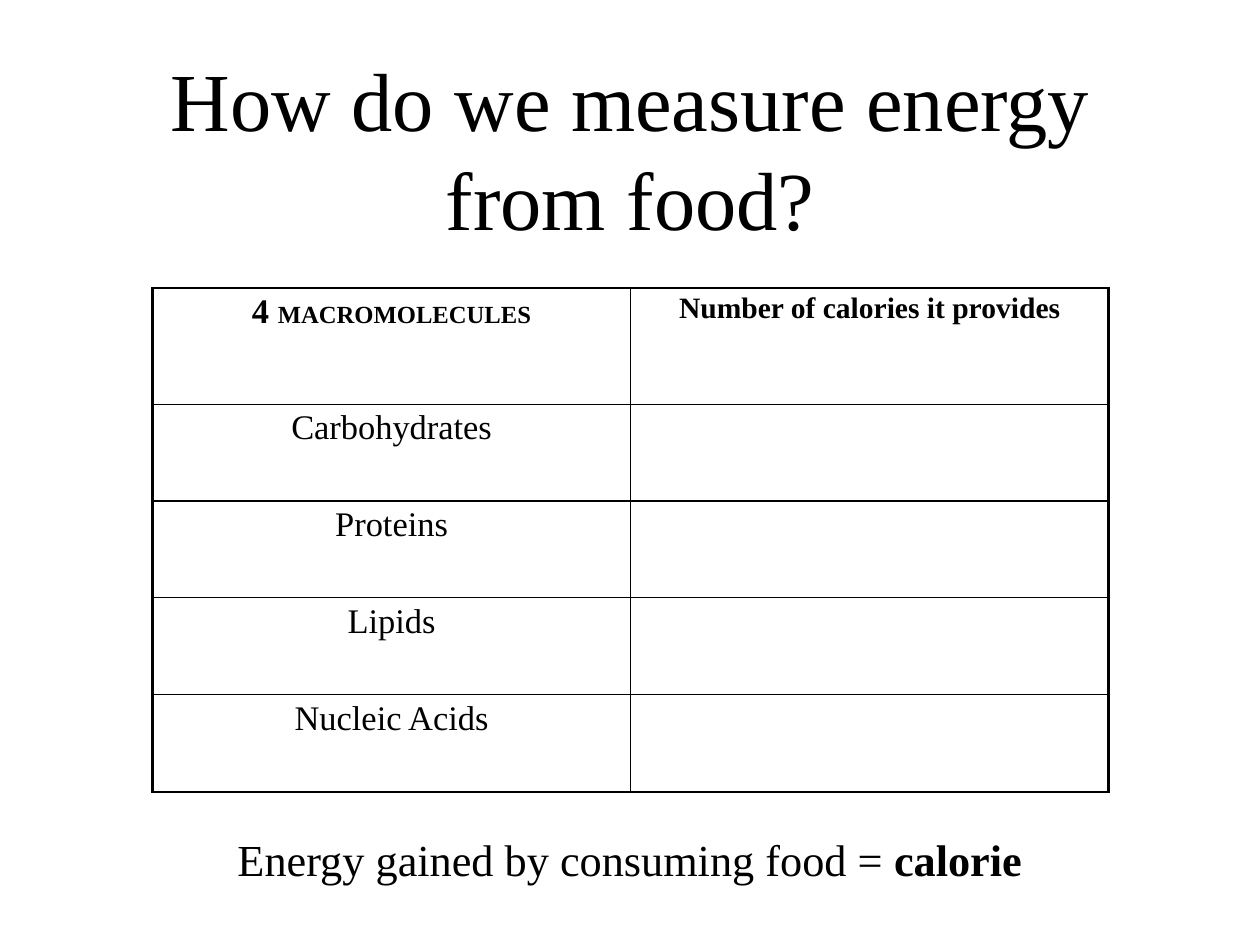
from lxml.etree import SubElement
from pptx import Presentation
from pptx.dml.color import RGBColor
from pptx.enum.text import MSO_ANCHOR, MSO_AUTO_SIZE, PP_ALIGN
from pptx.oxml.ns import qn
from pptx.util import Pt

COLORS = {"ink": "000000", "paper": "FFFFFF"}
FONT = "Times New Roman"
THICK, THIN = 2.25, 1
HEADINGS = [
    [("4 ", 28), ("MACROMOLECULES", 20)],
    [("Number of calories it provides", 24)],
]
MACROMOLECULES = ["Carbohydrates", "Proteins", "Lipids", "Nucleic Acids"]


def add_span(para, text, size, bold=False):
    span = para.add_run()
    span.text = text
    span.font.name = FONT
    span.font.size = Pt(size)
    span.font.bold = bold
    span.font.color.rgb = RGBColor.from_string(COLORS["ink"])


def prepare_frame(frame, inset):
    """Set the insets and middle anchor, and return the centred first paragraph."""
    frame.margin_left = frame.margin_right = Pt(inset)
    frame.margin_top = frame.margin_bottom = Pt(inset)
    frame.vertical_anchor = MSO_ANCHOR.MIDDLE
    para = frame.paragraphs[0]
    para.alignment = PP_ALIGN.CENTER
    return para


def add_title(page, left, top, width, height):
    title = page.shapes.title
    title.left, title.top = Pt(left), Pt(top)
    title.width, title.height = Pt(width), Pt(height)
    title.text_frame.auto_size = MSO_AUTO_SIZE.NONE
    para = prepare_frame(title.text_frame, 4.5)
    add_span(para, "How do we measure energy from food?", 67)


def set_borders(cell, widths):
    """Draw the cell's left, right, top and bottom lines, in that order."""
    properties = cell._tc.get_or_add_tcPr()
    for index, (side, width) in enumerate(zip("LRTB", widths)):
        line = properties.makeelement(qn(f"a:ln{side}"), {"w": str(Pt(width))})
        fill = SubElement(line, qn("a:solidFill"))
        SubElement(fill, qn("a:srgbClr"), val=COLORS["ink"])
        properties.insert(index, line)


def add_calorie_table(page, left, top, width, height):
    rows, columns = len(MACROMOLECULES) + 1, len(HEADINGS)
    frame = page.shapes.add_table(
        rows, columns, Pt(left), Pt(top), Pt(width), Pt(height)
    )
    table = frame.table
    table.first_row = table.horz_banding = False

    header_height = 94.4
    body_height = (height - header_height) / len(MACROMOLECULES)
    for column in table.columns:
        column.width = Pt(width / columns)
    for index, row in enumerate(table.rows):
        row.height = Pt(body_height if index else header_height)

    contents = [HEADINGS] + [[[(name, 28)], []] for name in MACROMOLECULES]
    for r, row_spans in enumerate(contents):
        for c, spans in enumerate(row_spans):
            cell = table.cell(r, c)
            cell.fill.solid()
            cell.fill.fore_color.rgb = RGBColor.from_string(COLORS["paper"])
            cell.margin_left = cell.margin_right = Pt(3.6)
            cell.margin_top = cell.margin_bottom = Pt(3.6)
            outer_edges = (c == 0, c == columns - 1, r == 0, r == rows - 1)
            set_borders(cell, [THICK if outer else THIN for outer in outer_edges])
            para = cell.text_frame.paragraphs[0]
            para.alignment = PP_ALIGN.CENTER
            para.space_before = Pt(5 if r == 0 and c == 1 else 6)
            for text, size in spans:
                add_span(para, text, size, bold=r == 0)


def add_caption(page, left, top, width, height):
    box = page.shapes.add_textbox(Pt(left), Pt(top), Pt(width), Pt(height))
    para = prepare_frame(box.text_frame, 4.5)
    box.text_frame.word_wrap = False
    box.text_frame.auto_size = MSO_AUTO_SIZE.SHAPE_TO_FIT_TEXT
    add_span(para, "Energy gained by consuming food = ", 36)
    add_span(para, "calorie", 36, bold=True)


def main():
    deck = Presentation()
    deck.slide_width, deck.slide_height = Pt(1024), Pt(768)
    page = deck.slides.add_slide(deck.slide_layouts[5])
    page.background.fill.solid()
    page.background.fill.fore_color.rgb = RGBColor.from_string(COLORS["paper"])
    add_title(page, 75, 35, 874, 170)
    add_calorie_table(page, 124, 234, 777, 409.6)
    add_caption(page, 188.5, 674, 646.5, 48)
    deck.save("out.pptx")


if __name__ == "__main__":
    main()
